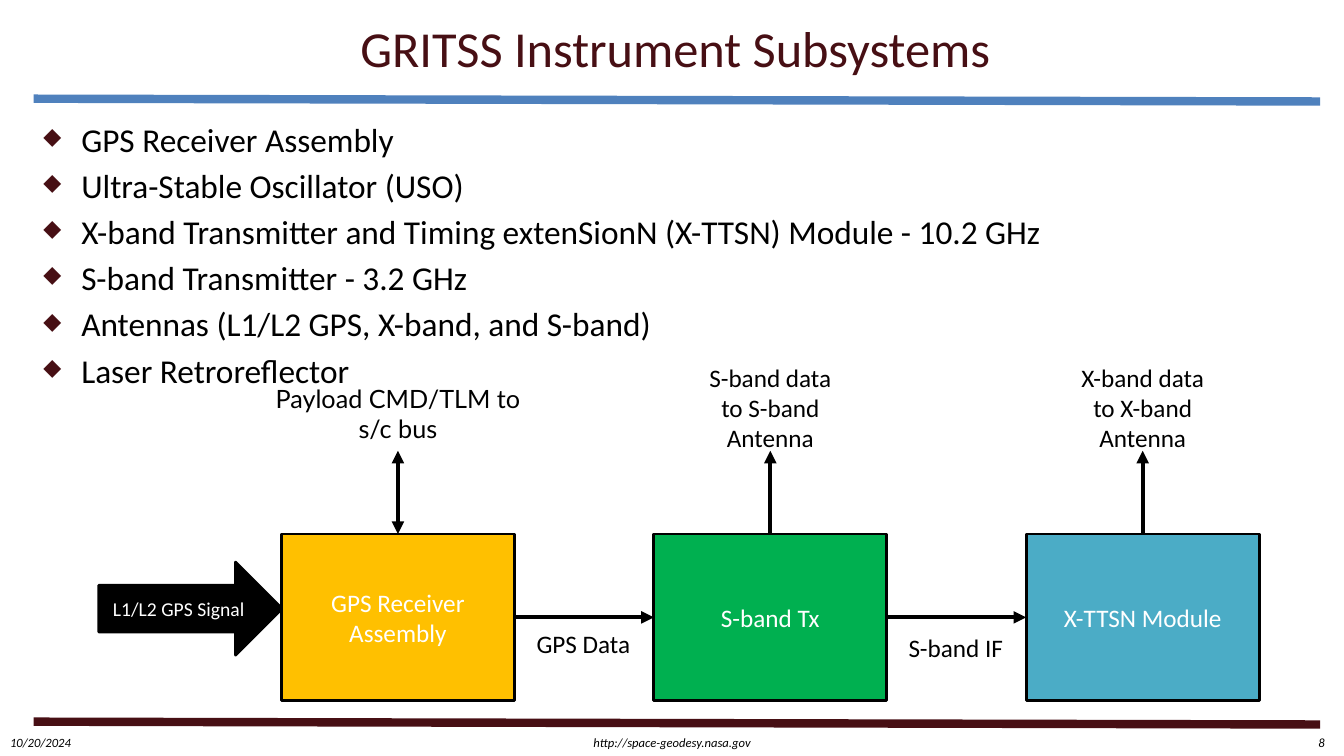
"""Build the GRITSS instrument subsystems slide."""
from dataclasses import dataclass

from lxml import etree
from pptx import Presentation
from pptx import util as u
from pptx.dml.color import RGBColor
from pptx.enum import shapes, text
from pptx.oxml import ns


@dataclass(frozen=True)
class Theme:
    """Colours, fonts and type sizes."""
    black: str = "000000"
    white: str = "FFFFFF"
    maroon: str = "470F14"
    blue: str = "4F81BD"
    amber: str = "FFC000"
    green: str = "00B050"
    teal: str = "4BACC6"
    font: str = "Calibri"
    alt_font: str = "Lato"
    title: float = 36
    body: float = 23.8
    label: float = 18
    small: float = 14
    footer: float = 9


class Deck:
    """Holds the theme and the current slide."""

    def __init__(self, prs, theme):
        """Add a title-only slide."""
        self.t = theme
        self.s = prs.slides.add_slide(prs.slide_layouts[5])

    def fill_text(self, tf, lines, size, color, align=text.PP_ALIGN.CENTER, **fmt):
        """Fill a text frame with formatted paragraphs."""
        fmt = {"name": self.t.font, "size": u.Pt(size), **fmt}
        for i, line in enumerate(lines):
            p = tf.paragraphs[0] if i == 0 else tf.add_paragraph()
            p.alignment = align
            r = p.add_run()
            r.text = line
            for key, value in fmt.items():
                setattr(r.font, key, value)
            r.font.color.rgb = RGBColor.from_string(color)

    def title(self, line, x, y, w, h):
        """Place and format the title placeholder."""
        sp = self.s.shapes.title
        box = {"left": x, "top": y, "width": w, "height": h}
        for key, value in box.items():
            setattr(sp, key, u.Pt(value))
        tf = sp.text_frame
        tf.vertical_anchor = text.MSO_ANCHOR.MIDDLE
        self.fill_text(tf, [line], self.t.title, self.t.maroon)

    def label(self, line, x, y, w, h, size=None, wrap=True, **fmt):
        """Add a text box with one paragraph."""
        tf = self.s.shapes.add_textbox(*map(u.Pt, (x, y, w, h))).text_frame
        tf.word_wrap = wrap
        tf.auto_size = text.MSO_AUTO_SIZE.SHAPE_TO_FIT_TEXT
        self.fill_text(tf, [line], size or self.t.label, self.t.black, **fmt)

    def bullets(self, lines, x, y, w, h):
        """Add a list with diamond bullets."""
        tf = self.s.shapes.add_textbox(*map(u.Pt, (x, y, w, h))).text_frame
        tf.word_wrap = True
        self.fill_text(tf, lines, self.t.body, self.t.black, text.PP_ALIGN.LEFT)
        for i, p in enumerate(tf.paragraphs):
            if i:
                p.space_before = u.Pt(4.4)
            pPr = p._p.get_or_add_pPr()
            pPr.set("marL", str(u.Pt(27)))
            pPr.set("indent", str(u.Pt(-27)))
            clr = etree.SubElement(pPr, ns.qn("a:buClr"))
            etree.SubElement(clr, ns.qn("a:srgbClr"), val=self.t.maroon)
            etree.SubElement(pPr, ns.qn("a:buSzPct"), val="70000")
            etree.SubElement(pPr, ns.qn("a:buChar"), char="◆")

    def block(self, kind, line, x, y, w, h, fill, size):
        """Add a filled, outlined shape with centred text."""
        sp = self.s.shapes.add_shape(kind, *map(u.Pt, (x, y, w, h)))
        sp.shadow.inherit = False
        sp.fill.solid()
        sp.fill.fore_color.rgb = RGBColor.from_string(fill)
        sp.line.color.rgb = RGBColor.from_string(self.t.black)
        sp.line.width = u.Pt(2)
        tf = sp.text_frame
        tf.word_wrap = True
        tf.vertical_anchor = text.MSO_ANCHOR.MIDDLE
        self.fill_text(tf, [line], size, self.t.white)

    def line(self, x1, y1, x2, y2, color, width, ends=()):
        """Add a straight line with optional arrowheads."""
        c = self.s.shapes.add_connector(
            shapes.MSO_CONNECTOR.STRAIGHT, *map(u.Pt, (x1, y1, x2, y2)))
        c.line.color.rgb = RGBColor.from_string(color)
        c.line.width = u.Pt(width)
        ln = c._element.spPr.find(ns.qn("a:ln"))
        for end in ends:
            etree.SubElement(ln, ns.qn(end), type="triangle")
        etree.SubElement(c._element.spPr, ns.qn("a:effectLst"))


def main():
    """Compose and save the slide."""
    prs = Presentation()
    prs.slide_width, prs.slide_height = u.Pt(960), u.Pt(540)
    t = Theme()
    d = Deck(prs, t)

    d.line(24, 70.5, 943, 72.5, t.blue, 6)
    d.line(24, 515.5, 943, 517.5, t.maroon, 6)
    for line, x, w in (("10/20/2024", 0, 58), ("8", 931.5, 25),
                       ("http://space-geodesy.nasa.gov", 415.5, 129)):
        d.label(line, x, 521.5, w, 18, t.footer, wrap=False, italic=True)

    d.title("GRITSS Instrument Subsystems", 72, 3.6, 821, 60.5)
    d.bullets(["GPS Receiver Assembly",
               "Ultra-Stable Oscillator (USO)",
               "X-band Transmitter and Timing extenSionN (X-TTSN) Module - 10.2 GHz",
               "S-band Transmitter - 3.2 GHz",
               "Antennas (L1/L2 GPS, X-band, and S-band)",
               "Laser Retroreflector"], 24, 81.5, 919, 180)

    left, top, w, h, pitch = 201, 381.5, 166.5, 119, 266
    arrow_top, mid = 322, top + h / 2
    d.block(shapes.MSO_SHAPE.RIGHT_ARROW, "L1/L2 GPS Signal",
            70.5, 401.5, 131, 66.5, t.black, t.small)
    modules = (
        ("GPS Receiver Assembly", t.amber, ("a:headEnd", "a:tailEnd")),
        ("S-band Tx", t.green, ("a:tailEnd",)),
        ("X-TTSN Module", t.teal, ("a:tailEnd",)))
    for i, (name, fill, ends) in enumerate(modules):
        x = left + i * pitch
        d.block(shapes.MSO_SHAPE.RECTANGLE, name, x, top, w, h, fill, t.label)
        d.line(x + w / 2, top, x + w / 2, arrow_top, t.black, 3, ends)
        if i:
            d.line(x - pitch + w, mid, x, mid, t.black, 3, ("a:tailEnd",))

    d.label("Payload CMD/TLM to s/c bus", 185.5, 270, 197.5, 51, name=t.alt_font)
    for line, x, y, height in (
            ("GPS Data", 360, 445, 29),
            ("S-band IF", 626, 448, 29),
            ("S-band data to S-band Antenna", 493.5, 255, 73),
            ("X-band data to X-band Antenna", 759.5, 255, 73)):
        d.label(line, x, y, 113.5, height)

    prs.save("out.pptx")


if __name__ == "__main__":
    main()
